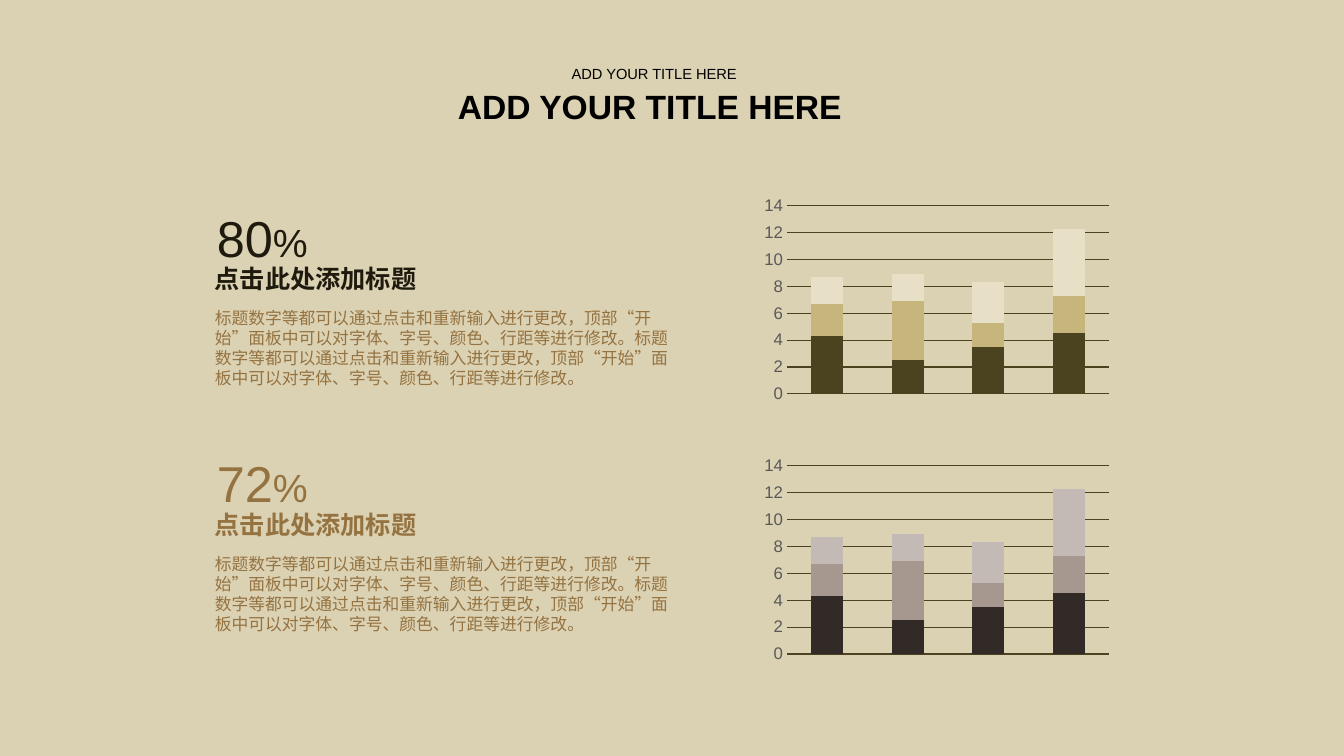
import pptx
import pptx.chart.data
import pptx.dml.color
import pptx.enum.chart
import pptx.enum.text
import pptx.oxml.ns
import pptx.util
from lxml import etree

PX = 9144  # 100 px to the inch
HEAD = "点击此处添加标题"
BODY = "标题数字等都可以通过点击和重新输入进行更改，顶部“开始”面板中可以对字体、字号、颜色、行距等进行修改。" * 2
TITLE = "ADD YOUR TITLE HERE"
BROWN = "957341"
GRID = "4B4220"
DATA = [
    ("Series 1", (4.3, 2.5, 3.5, 4.5)),
    ("Series 2", (2.4, 4.4, 1.8, 2.8)),
    ("Series 3", (2, 2, 3, 5)),
]
# number, number and heading colour, text box, chart box, series colours
ROWS = [
    ("80", "1E1A0D", (206, 201, 478, 189), (751, 191, 356, 213),
     (GRID, "C7B67C", "E7E0C7")),
    ("72", BROWN, (206, 445, 478, 188), (751, 449, 356, 213),
     ("312A27", "A6978F", "C4BAB5")),
]


def px(*nums):
    return [pptx.util.Emu(num * PX) for num in nums]


def rgb(code):
    return pptx.dml.color.RGBColor.from_string(code)


def paint(fill, code):
    fill.solid()
    fill.fore_color.rgb = rgb(code)


def style(font, name, size, code, bold=False):
    font.name = name
    font.size = pptx.util.Pt(size)
    font.bold = bold
    font.color.rgb = rgb(code)


def asian(para, name):
    """Set the East Asian typeface of a paragraph."""
    tag = pptx.oxml.ns.qn("a:ea")
    etree.SubElement(para.font._rPr, tag).set("typeface", name)


def title(hold, box, size, bold):
    hold.left, hold.top, hold.width, hold.height = px(*box)
    frame = hold.text_frame
    frame.text = TITLE
    frame.word_wrap = True
    frame.auto_size = pptx.enum.text.MSO_AUTO_SIZE.NONE
    frame.vertical_anchor = pptx.enum.text.MSO_ANCHOR.TOP
    para = frame.paragraphs[0]
    para.alignment = pptx.enum.text.PP_ALIGN.LEFT
    para.line_spacing = 0.9
    para.space_before = pptx.util.Pt(0)
    style(para.font, "Arial", size, "000000", bold)


def label(slide, box):
    """Add an empty text box and return its first paragraph."""
    frame = slide.shapes.add_textbox(*px(*box)).text_frame
    frame.word_wrap = True
    frame.margin_left, frame.margin_right = px(7, 7)
    frame.margin_top, frame.margin_bottom = px(4, 4)
    return frame.paragraphs[0]


def block(slide, box, num, code):
    """Place a percentage, a heading and a text in the box."""
    left, top, width, height = box
    para = label(slide, (left + 2, top, 128, 68))
    style(para.font, "Arial", 36, code)
    for text, size in ((num, 36), ("%", 28)):
        run = para.add_run()
        run.text = text
        run.font.size = pptx.util.Pt(size)

    para = label(slide, (left, top + 56, 330, 68))
    para.text = HEAD
    para.line_spacing = pptx.util.Pt(21.5)
    style(para.font, "Roboto", 18, code, True)
    asian(para, "Noto Sans CJK SC")

    para = label(slide, (left, top + 100, width, height - 100))
    para.text = BODY
    para.line_spacing = pptx.util.Pt(14.4)
    style(para.font, "Noto Sans CJK SC", 12, BROWN)
    asian(para, "Noto Sans CJK SC")


def graph(slide, box, codes):
    data = pptx.chart.data.CategoryChartData()
    data.categories = ["1", "2", "3", "4"]
    for name, vals in DATA:
        data.add_series(name, vals)
    kind = pptx.enum.chart.XL_CHART_TYPE.COLUMN_STACKED
    chart = slide.shapes.add_chart(kind, *px(*box), data).chart
    chart.has_legend = False
    chart.has_title = False
    style(chart.font, "Arial", 10, "000000")

    plot = chart.plots[0]
    plot.gap_width = 150
    plot.overlap = 100
    plot.vary_by_categories = False
    for part, code in zip(plot.series, codes):
        paint(part.format.fill, code)

    chart.category_axis.visible = False
    axis = chart.value_axis
    axis.major_tick_mark = pptx.enum.chart.XL_TICK_MARK.NONE
    axis.format.line.fill.background()
    style(axis.tick_labels.font, "Arial", 12, "595959")
    line = axis.major_gridlines.format.line
    line.width = pptx.util.Pt(0.75)
    paint(line.fill, GRID)


def main():
    deck = pptx.Presentation()
    deck.slide_width, deck.slide_height = px(1333, 750)
    slide = deck.slides.add_slide(deck.slide_layouts[0])
    paint(slide.background.fill, "DBD1B3")
    title(slide.shapes.title, (444, 85, 407, 43), 24, True)
    title(slide.placeholders[1], (557, 61, 186, 18), 10.5, False)
    for num, code, text, plot, codes in ROWS:
        block(slide, text, num, code)
        graph(slide, plot, codes)
    deck.save("out.pptx")


if __name__ == "__main__":
    main()
